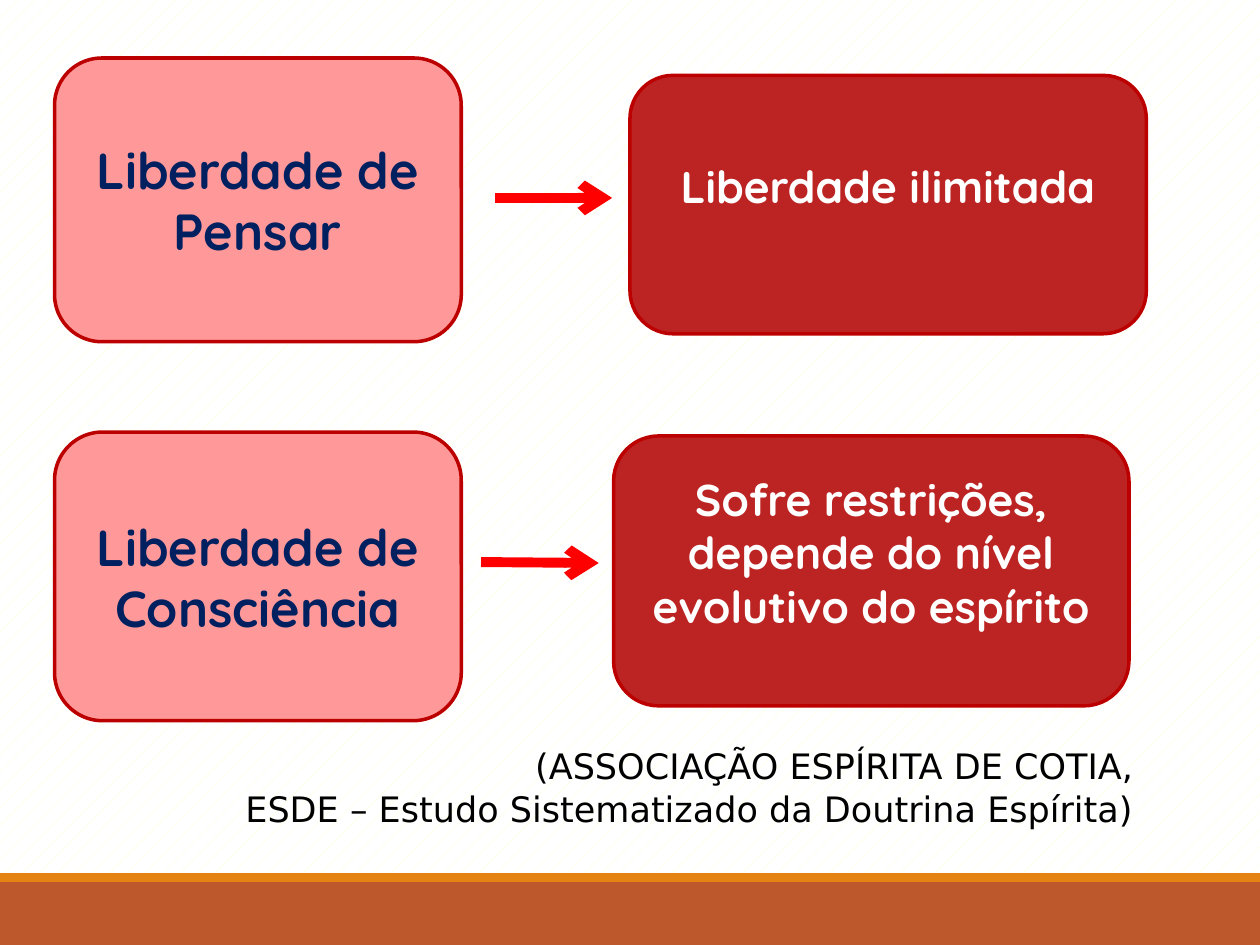
from lxml.etree import SubElement
from pptx import Presentation
from pptx.dml.color import RGBColor
from pptx.enum.dml import MSO_PATTERN
from pptx.enum.shapes import MSO_CONNECTOR, MSO_SHAPE as Kind
from pptx.enum.text import MSO_ANCHOR, PP_ALIGN
from pptx.oxml.ns import qn
from pptx.util import Cm, Pt

WHITE = RGBColor(0xFF, 0xFF, 0xFF)
CREAM = RGBColor(0xFF, 0xFF, 0xCC)
BLACK = RGBColor(0, 0, 0)
NAVY = RGBColor(0x00, 0x20, 0x60)
PINK = RGBColor(0xFF, 0x99, 0x99)
RED = RGBColor(0xBC, 0x24, 0x24)
EDGE = RGBColor(0xBC, 0x00, 0x00)
BRIGHT = RGBColor(0xFF, 0x00, 0x00)
RUST = RGBColor(0xBD, 0x58, 0x2C)
ORANGE = RGBColor(0xE4, 0x83, 0x12)

WIDE, HIGH = 25.4, 19.05
CAUSE = dict(fill=PINK, color=NAVY, size=29, low=0.13)
EFFECT = dict(fill=RED, color=WHITE, size=25.4, low=0.89)
BANDS = [(17.78, 1.27, RUST), (17.6, 0.18, ORANGE)]
BOXES = [
    ("Liberdade de Pensar", (1.1, 1.17, 8.2, 5.72), CAUSE),
    ("Liberdade ilimitada", (12.7, 1.52, 10.41, 5.21), EFFECT),
    ("Liberdade de Consciência", (1.1, 8.71, 8.2, 5.82), CAUSE),
    ("Sofre restrições, depende do nível evolutivo do espírito",
     (12.37, 8.79, 10.39, 5.44), EFFECT),
]
ARROWS = [(9.98, 3.99, 12.34, 3.99), (9.7, 11.33, 12.07, 11.35)]
SOURCE = ["(ASSOCIAÇÃO ESPÍRITA DE COTIA,",
          "ESDE – Estudo Sistematizado da Doutrina Espírita)"]


def add_block(slide, kind, place, fill):
    shape = slide.shapes.add_shape(kind, *map(Cm, place))
    shape.shadow.inherit = False
    shape.fill.solid()
    shape.fill.fore_color.rgb = fill
    shape.line.fill.background()
    return shape


def set_frame(frame, side, top, low):
    frame.word_wrap = True
    frame.margin_left = frame.margin_right = Cm(side)
    frame.margin_top, frame.margin_bottom = Cm(top), Cm(low)


def set_font(para, name, size, color, bold):
    for run in para.runs:
        font = run.font
        font.name, font.size, font.bold = name, Pt(size), bold
        font.color.rgb = color


def add_box(slide, text, place, look):
    box = add_block(slide, Kind.ROUNDED_RECTANGLE, place, look["fill"])
    box.line.color.rgb = EDGE
    box.line.width = Pt(2)
    frame = box.text_frame
    set_frame(frame, 0.24, 0.13, look["low"])
    frame.vertical_anchor = MSO_ANCHOR.MIDDLE
    frame.text = text
    para = frame.paragraphs[0]
    para.alignment = PP_ALIGN.CENTER
    set_font(para, "Quicksand", look["size"], look["color"], True)


def add_arrow(slide, ends):
    arrow = slide.shapes.add_connector(MSO_CONNECTOR.STRAIGHT, *map(Cm, ends))
    arrow.line.color.rgb = BRIGHT
    arrow.line.width = Pt(5.67)
    props = arrow.line._get_or_add_ln()
    SubElement(props, qn("a:tailEnd"), type="arrow")
    SubElement(arrow._element.spPr, qn("a:effectLst"))


def add_source(slide):
    place = (3.86, 15.08, 19.23, 2.5)
    frame = slide.shapes.add_textbox(*map(Cm, place)).text_frame
    set_frame(frame, 0.24, 0.1, 0.1)
    frame.text = "\n".join(SOURCE)
    for rank, para in enumerate(frame.paragraphs):
        para.alignment = PP_ALIGN.RIGHT
        para.line_spacing = 0.8
        if rank:
            para.space_before = Pt(5.4)
        set_font(para, "DejaVu Sans", 20, BLACK, False)


def main():
    deck = Presentation()
    deck.slide_width, deck.slide_height = Cm(WIDE), Cm(HIGH)
    slide = deck.slides.add_slide(deck.slide_layouts[6])
    back = slide.background.fill
    back.patterned()
    back.pattern = MSO_PATTERN.PERCENT_5
    back.fore_color.rgb, back.back_color.rgb = CREAM, WHITE
    for top, high, fill in BANDS:
        add_block(slide, Kind.RECTANGLE, (0, top, WIDE, high), fill)
    for box in BOXES:
        add_box(slide, *box)
    for ends in ARROWS:
        add_arrow(slide, ends)
    add_source(slide)
    deck.save("out.pptx")


if __name__ == "__main__":
    main()
